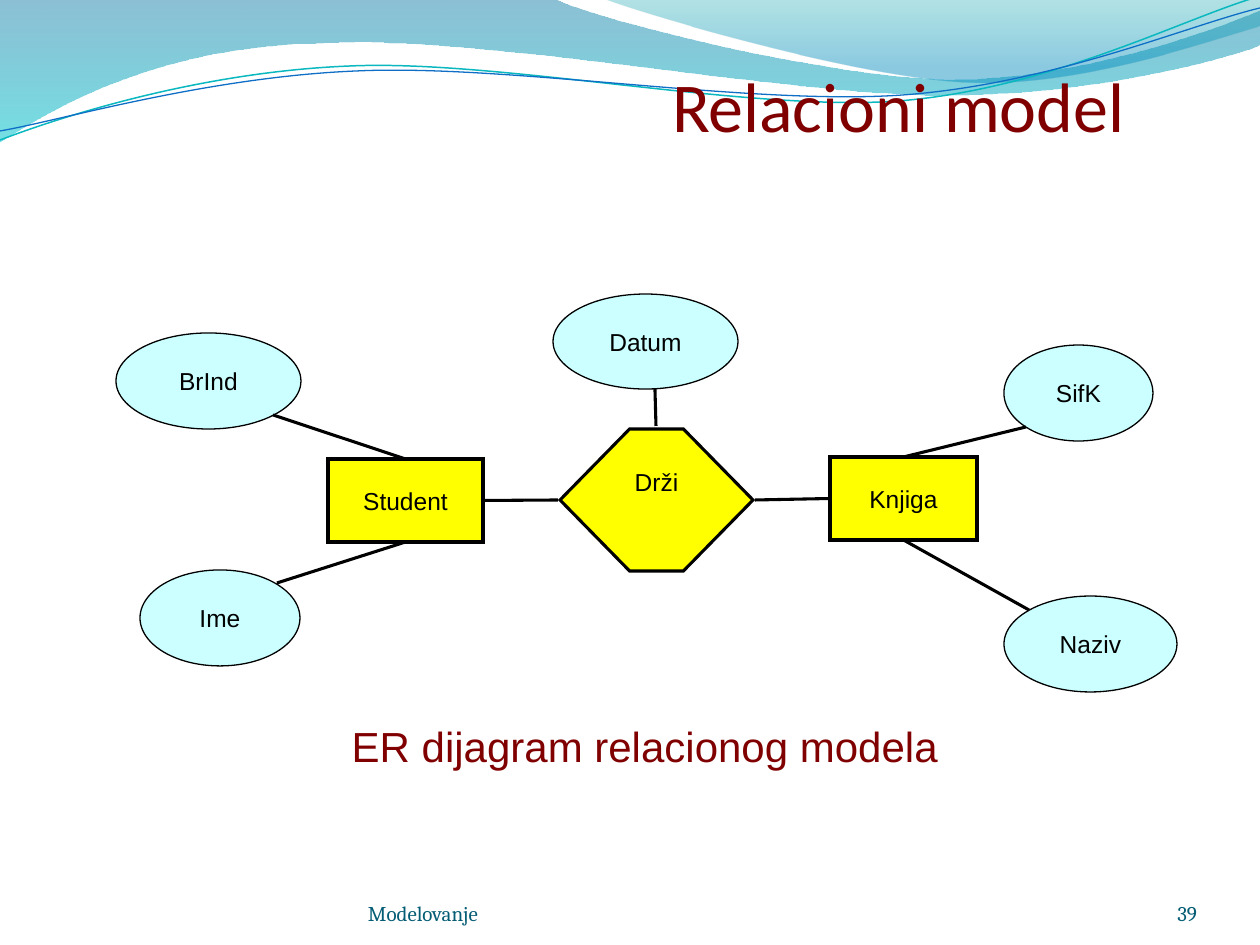
import pptx
import pptx.dml.color
import pptx.enum.shapes
import pptx.enum.text
import pptx.oxml
import pptx.oxml.ns
import pptx.util

RGBColor = pptx.dml.color.RGBColor
MSO_SHAPE = pptx.enum.shapes.MSO_SHAPE
ANCHOR = pptx.enum.text.MSO_ANCHOR
ALIGN = pptx.enum.text.PP_ALIGN
qn = pptx.oxml.ns.qn
DRAWING_NS = pptx.oxml.ns.nsdecls("a")

EMU_PER_PX = 914400 / 126
SLIDE_WIDTH, SLIDE_HEIGHT = 1260, 945

BLACK = RGBColor(0x00, 0x00, 0x00)
MAROON = RGBColor(0x80, 0x00, 0x00)
YELLOW = RGBColor(0xFF, 0xFF, 0x00)
PALE_CYAN = RGBColor(0xCC, 0xFF, 0xFF)
FOOTER_TEAL = RGBColor(0x04, 0x5D, 0x75)
WAVE_BLUE = RGBColor(0x00, 0x74, 0xA1)
WAVE_CYAN = RGBColor(0x00, 0xC6, 0xCF)
CREST_TEAL = RGBColor(0x00, 0xA1, 0xA9)
CREST_BLUE = RGBColor(0x00, 0x8B, 0xBF)
LINE_TEAL = RGBColor(0x0A, 0xB8, 0xBF)
LINE_BLUE = RGBColor(0x0F, 0x6F, 0xC6)

TITLE_FONT = {"name": "Calibri", "size": pptx.util.Pt(40), "color": MAROON}
CAPTION_FONT = {"name": "Arial", "size": pptx.util.Pt(24), "color": MAROON}
LABEL_FONT = {"name": "Arial", "size": pptx.util.Pt(14), "color": BLACK}
FOOTER_FONT = {"name": "Cambria", "size": pptx.util.Pt(12), "color": FOOTER_TEAL}

# Node style: preset, fill, line width, text anchor, insets
ENTITY = (MSO_SHAPE.RECTANGLE, YELLOW, 2, ANCHOR.MIDDLE, (11, 5, 11, 5))
ATTRIBUTE = (MSO_SHAPE.OVAL, PALE_CYAN, 0.75, ANCHOR.MIDDLE, (11, 5, 11, 5))
RELATION = (MSO_SHAPE.HEXAGON, YELLOW, 1.75, ANCHOR.TOP, (13, 6, 13, 6))

# Sides of a rectangle
TOP, LEFT, BOTTOM, RIGHT = range(4)


def px(length):
    return pptx.util.Emu(round(length * EMU_PER_PX))


def write_text(shape, text, font_format, alignment, anchor, insets):
    frame = shape.text_frame
    frame.word_wrap = True
    frame.vertical_anchor = anchor
    for side, inset in zip(("left", "top", "right", "bottom"), insets):
        setattr(frame, f"margin_{side}", px(inset))
    paragraph = frame.paragraphs[0]
    paragraph.text = text
    paragraph.alignment = alignment
    for name, value in font_format.items():
        if name == "color":
            paragraph.runs[0].font.color.rgb = value
        else:
            setattr(paragraph.runs[0].font, name, value)


def add_text(slide, box, text, font_format, alignment=ALIGN.LEFT,
             anchor=ANCHOR.BOTTOM, insets=(0, 0, 0, 0)):
    shape = slide.shapes.add_textbox(*map(px, box))
    write_text(shape, text, font_format, alignment, anchor, insets)


def add_outline(slide, box, start, segments, close):
    """Segments are lines (x, y) or cubic curves (two controls and an end)."""
    left, top = box[:2]
    ends = [(px(left + s[-2]), px(top + s[-1])) for s in [start] + segments]
    builder = slide.shapes.build_freeform(*ends[0], scale=1.0)
    builder.add_line_segments(ends[1:], close=close)
    shape = builder.convert_to_shape()
    shape.shadow.inherit = False
    # Bend the segments that have control points
    lines = list(shape.element.spPr.iter(qn("a:lnTo")))
    for line, segment in zip(lines, segments):
        if len(segment) == 6:
            points = "".join(
                f'<a:pt x="{px(left + x) - shape.left}" y="{px(top + y) - shape.top}"/>'
                for x, y in zip(segment[::2], segment[1::2]))
            curve = pptx.oxml.parse_xml(
                f"<a:cubicBezTo {DRAWING_NS}>{points}</a:cubicBezTo>")
            line.getparent().replace(line, curve)
    return shape


def add_waves(slide, box):
    # Filled waves: start, segments, gradient stops (position, colour, opacity)
    waves = [
        ((0, 0),
         [(554, -1), (600, 21, 837, 79, 955, 79), (1075, 79, 1207, 33, 1260, 11),
          (1261, 45), (1239, 55, 1096, 96, 940, 95), (784, 95, 481, 35, 324, 43),
          (163, 45, 58, 105, -1, 142), (0, 0)],
         [(0, WAVE_BLUE, 45), (1, WAVE_CYAN, 55)]),
        ((604, -1),
         [(641, 14, 859, 78, 969, 82), (1079, 87, 1211, 40, 1260, 26), (1260, 0),
          (604, -1)],
         [(0, CREST_TEAL, 30), (0.8, CREST_BLUE, 45)]),
    ]
    for start, segments, stops in waves:
        shape = add_outline(slide, box, start, segments, close=True)
        shape.line.fill.background()
        shape.fill.gradient()
        shape.fill.gradient_angle = 270
        for stop, (position, color, _) in zip(shape.fill.gradient_stops, stops):
            stop.position = position
            stop.color.rgb = color
        colors = shape.element.spPr.iter(qn("a:srgbClr"))
        for element, (_, _, opacity) in zip(colors, stops):
            element.append(pptx.oxml.parse_xml(
                f'<a:alpha {DRAWING_NS} val="{opacity * 1000}"/>'))

    # Thin curves
    curves = [
        ((0, 140),
         [(60, 117, 199, 72, 349, 66), (498, 59, 747, 112, 898, 101),
          (1050, 89, 1182, 19, 1257, -3)], LINE_TEAL, 0.85),
        ((0, 131),
         [(59, 121, 207, 77, 357, 71), (508, 64, 752, 106, 903, 95),
          (1053, 84, 1186, 26, 1260, 8)], LINE_BLUE, 0.75),
    ]
    for start, segments, color, width in curves:
        shape = add_outline(slide, box, start, segments, close=False)
        shape.fill.background()
        shape.line.color.rgb = color
        shape.line.width = pptx.util.Pt(width)


def add_node(slide, box, text, style):
    preset, fill, line_width, anchor, insets = style
    shape = slide.shapes.add_shape(preset, *map(px, box))
    shape.shadow.inherit = False
    shape.fill.solid()
    shape.fill.fore_color.rgb = fill
    shape.line.color.rgb = BLACK
    shape.line.width = pptx.util.Pt(line_width)
    # Sharp corners
    shape.element.spPr.find(qn("a:ln")).append(
        pptx.oxml.parse_xml(f'<a:miter {DRAWING_NS} lim="800000"/>'))
    if preset == MSO_SHAPE.HEXAGON:
        shape.adjustments[0] = 0.49
    write_text(shape, text, LABEL_FONT, ALIGN.CENTER, anchor, insets)
    return shape


def add_link(slide, start, end):
    connector = slide.shapes.add_connector(
        pptx.enum.shapes.MSO_CONNECTOR.STRAIGHT, *map(px, start + end))
    connector.line.color.rgb = BLACK
    connector.line.width = pptx.util.Pt(1.75)
    connector.element.spPr.append(
        pptx.oxml.parse_xml(f"<a:effectLst {DRAWING_NS}/>"))
    return connector


def add_er_diagram(slide, box):
    left, top = box[:2]
    nodes = {}
    for text, style, x, y, width, height in [
        ("Student", ENTITY, 212, 165, 155, 83),
        ("BrInd", ATTRIBUTE, 0, 39, 185, 96),
        ("Ime", ATTRIBUTE, 24, 276, 160, 96),
        ("Knjiga", ENTITY, 714, 163, 147, 83),
        ("SifK", ATTRIBUTE, 888, 51, 149, 96),
        ("Naziv", ATTRIBUTE, 888, 302, 173, 96),
        ("Drži", RELATION, 444, 135, 193, 142),
        ("Datum", ATTRIBUTE, 437, 0, 185, 95),
    ]:
        nodes[text] = add_node(slide, (left + x, top + y, width, height), text, style)

    # Links from the side of an entity to an attribute or the relation
    for entity, side, x, y in [
        ("Student", BOTTOM, 161, 289),
        ("Student", TOP, 157, 121),
        ("Student", RIGHT, 442, 206),
        ("Knjiga", TOP, 910, 133),
        ("Knjiga", BOTTOM, 913, 316),
        ("Knjiga", LEFT, 639, 206),
    ]:
        end = (left + x, top + y)
        add_link(slide, end, end).begin_connect(nodes[entity], side)
    add_link(slide, (left + 540, top + 132), (left + 539, top + 95))


def add_footer(slide, box):
    left, top, width, height = box
    add_text(slide, (left, top, 462, height), "Modelovanje", FOOTER_FONT)
    add_text(slide, (left + width - 105, top, 105, height), "39", FOOTER_FONT, ALIGN.RIGHT)


def main():
    presentation = pptx.Presentation()
    presentation.slide_width = px(SLIDE_WIDTH)
    presentation.slide_height = px(SLIDE_HEIGHT)
    slide = presentation.slides.add_slide(presentation.slide_layouts[6])

    add_waves(slide, (0, 0, SLIDE_WIDTH, 142))
    add_text(slide, (672, 0, 588, 147), "Relacioni model", TITLE_FONT, insets=(0, 6, 0, 0))
    add_footer(slide, (368, 876, 829, 50))
    add_text(slide, (73, 714, 1155, 63), "ER dijagram relacionog modela ", CAPTION_FONT,
             ALIGN.CENTER, ANCHOR.MIDDLE, (13, 6, 13, 6))
    add_er_diagram(slide, (116, 294, 1061, 398))
    presentation.save("out.pptx")


if __name__ == "__main__":
    main()
